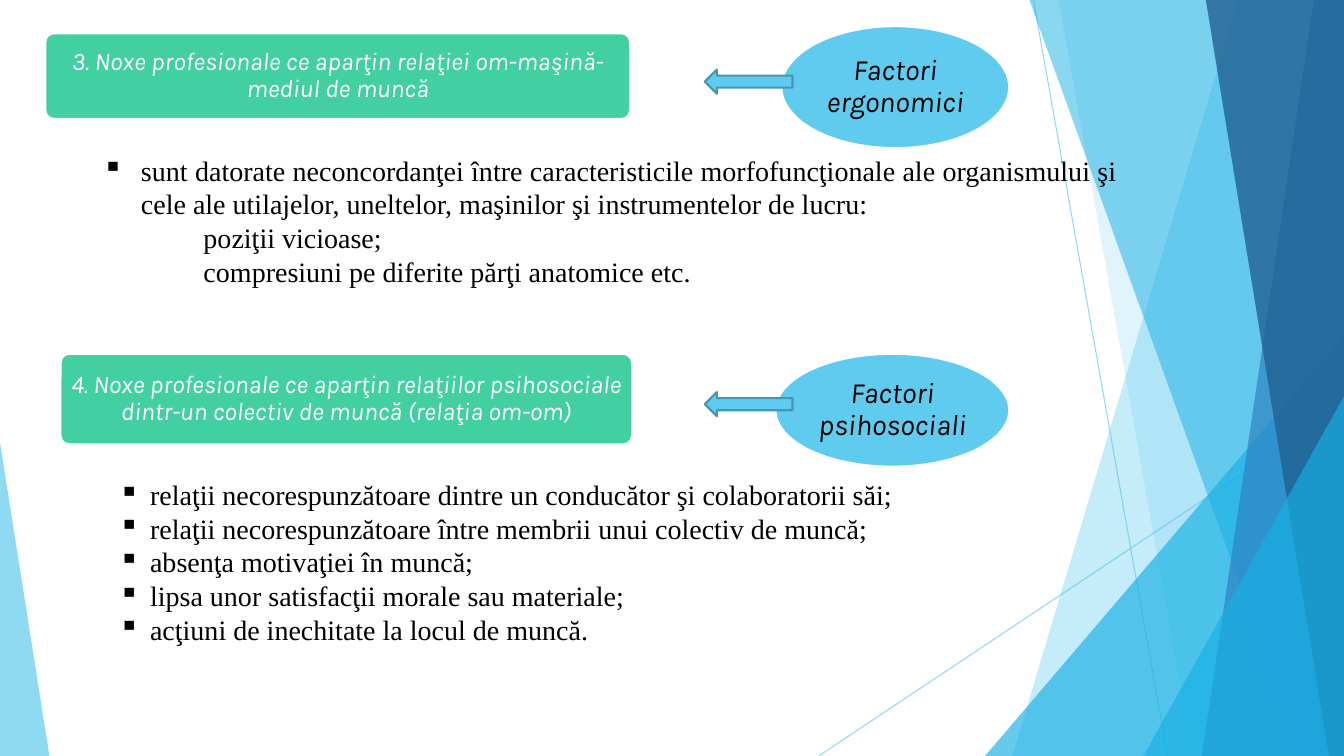
import pptx
import pptx.util
import pptx.dml.color
import pptx.enum.shapes
import pptx.enum.text
import pptx.oxml.ns
import lxml.etree

Inches, Pt = pptx.util.Inches, pptx.util.Pt
RGBColor = pptx.dml.color.RGBColor
MSO_SHAPE = pptx.enum.shapes.MSO_SHAPE
PP_ALIGN = pptx.enum.text.PP_ALIGN

WIDTH, HEIGHT = 13.33, 7.5
SKY = RGBColor(0x5F, 0xCB, 0xEF)
AZURE = RGBColor(0x17, 0xB0, 0xE4)
BLUE = RGBColor(0x2E, 0x83, 0xC3)
NAVY = RGBColor(0x22, 0x62, 0x92)
ARROW_EDGE = RGBColor(0x46, 0x96, 0xB1)
GREEN = RGBColor(0x42, 0xD0, 0xA2)
WHITE = RGBColor(0xFF, 0xFF, 0xFF)
BLACK = RGBColor(0, 0, 0)


def add_child(parent, tag, **attributes):
    return lxml.etree.SubElement(parent, pptx.oxml.ns.qn(tag), **attributes)


def set_opacity(part, percent):
    for color in part.iter(pptx.oxml.ns.qn("a:srgbClr")):
        add_child(color, "a:alpha", val=str(percent * 1000))


def paint(shape, color, edge=None, opacity=100):
    shape.shadow.inherit = False
    shape.fill.solid()
    shape.fill.fore_color.rgb = color
    if opacity < 100:
        set_opacity(shape.fill._xPr, opacity)
    if edge is None:
        shape.line.fill.background()
    else:
        shape.line.color.rgb = edge
        shape.line.width = Pt(1.5)


def add_preset(slide, kind, box):
    return slide.shapes.add_shape(kind, *map(Inches, box))


def write(paragraph, text, font, size, color, italic=False):
    run = paragraph.add_run()
    run.text = text
    run.font.name = font
    run.font.size = Pt(size)
    run.font.color.rgb = color
    run.font.italic = italic


def draw_backdrop(slide, width, height):
    """Thin rays and translucent facets along the slide's edges."""
    def ray(x1, y1, x2, y2):
        line = slide.shapes.add_connector(
            pptx.enum.shapes.MSO_CONNECTOR.STRAIGHT, *map(Inches, (x1, y1, x2, y2)))
        line.line.color.rgb = SKY
        line.line.width = Pt(0.75)
        properties = line._element.spPr
        set_opacity(properties, 70)
        add_child(properties, "a:effectLst")

    def facet(top_x, bottom_x, color, opacity):
        # Quadrilateral from a slanted left side to the right edge
        outline = slide.shapes.build_freeform(Inches(top_x), Inches(0))
        corners = [(width, 0), (width, height), (bottom_x, height)]
        outline.add_line_segments([(Inches(x), Inches(y)) for x, y in corners])
        paint(outline.convert_to_shape(), color, opacity=opacity)

    def corner(left, top, span, apex, color, opacity):
        triangle = add_preset(slide, MSO_SHAPE.ISOSCELES_TRIANGLE,
                              (left, top, span, height - top))
        triangle.adjustments[0] = apex
        paint(triangle, color, opacity=opacity)

    ray(10.25, 0, 11.58, height)
    ray(width, 4.03, 8.12, height)
    facet(12.28, 10.04, SKY, 36)
    facet(10.5, 11.83, SKY, 20)
    corner(9.77, 3.33, width - 9.77, 1, AZURE, 66)
    facet(10.21, 12.91, AZURE, 50)
    facet(13.03, 11.92, BLUE, 70)
    facet(11.96, 13.18, NAVY, 80)
    corner(11.34, 3.93, width - 11.34, 1, AZURE, 66)
    corner(0, 4.39, 0.49, 0, SKY, 70)


def add_label(slide, kind, box, text, fill, color, size, inset):
    label = add_preset(slide, kind, box)
    paint(label, fill, WHITE)
    if kind == MSO_SHAPE.ROUNDED_RECTANGLE:
        label.adjustments[0] = 0.1
    frame = label.text_frame
    frame.word_wrap = True
    frame.vertical_anchor = pptx.enum.text.MSO_ANCHOR.MIDDLE
    frame.margin_left = frame.margin_right = Inches(inset)
    frame.margin_top = frame.margin_bottom = Inches(inset)
    paragraph = frame.paragraphs[0]
    paragraph.alignment = PP_ALIGN.CENTER
    paragraph.line_spacing = 0.9
    write(paragraph, text, "Karla", size, color, italic=True)


def add_details(slide, box, hanging, bullets, examples):
    frame = slide.shapes.add_textbox(*map(Inches, box)).text_frame
    frame.word_wrap = True
    for index, text in enumerate(bullets + examples):
        paragraph = frame.paragraphs[0] if index == 0 else frame.add_paragraph()
        paragraph.alignment = PP_ALIGN.JUSTIFY
        properties = paragraph._p.get_or_add_pPr()
        if index < len(bullets):
            properties.set("marL", str(Inches(hanging)))
            properties.set("indent", str(-Inches(hanging)))
            add_child(properties, "a:buChar", char="▪")
        else:
            properties.set("marL", str(Inches(1)))
            properties.set("indent", "0")
        write(paragraph, text, "Times New Roman", 20, BLACK)


def add_hazard(slide, top, heading_box, factor_box, details_box,
               heading, factor, hanging, bullets, examples=()):
    """One hazard class: heading, arrow, factor and details below top."""
    def below(box):
        left, offset, width, height = box
        return left, top + offset, width, height

    add_details(slide, below(details_box), hanging, list(bullets), list(examples))
    add_label(slide, MSO_SHAPE.ROUNDED_RECTANGLE, below(heading_box),
              heading, GREEN, WHITE, 18, 0.01)
    add_label(slide, MSO_SHAPE.OVAL, below(factor_box), factor, SKY, BLACK, 21, 0.03)
    arrow = add_preset(slide, MSO_SHAPE.LEFT_ARROW, below((6.99, 0.69, 0.87, 0.24)))
    paint(arrow, SKY, ARROW_EDGE)


def main():
    deck = pptx.Presentation()
    deck.slide_width, deck.slide_height = Inches(WIDTH), Inches(HEIGHT)
    slide = deck.slides.add_slide(deck.slide_layouts[6])
    draw_backdrop(slide, WIDTH, HEIGHT)

    # Ergonomic factors
    add_hazard(
        slide, 0, (0.45, 0.33, 5.8, 0.85), (7.75, 0.26, 2.26, 1.21),
        (0.92, 1.47, 10.26, 1.45),
        "3. Noxe profesionale ce aparţin relaţiei om-maşină-mediul de muncă",
        "Factori ergonomici", 0.38,
        ["sunt datorate neconcordanţei între caracteristicile morfofuncţionale ale "
         "organismului şi cele ale utilajelor, uneltelor, maşinilor şi "
         "instrumentelor de lucru:"],
        ["poziţii vicioase;", "compresiuni pe diferite părţi anatomice etc."])

    # Psychosocial factors
    add_hazard(
        slide, 3.2, (0.6, 0.31, 5.67, 0.9), (7.69, 0.31, 2.32, 1.12),
        (1.08, 1.49, 9.79, 1.78),
        "4. Noxe profesionale ce aparţin relaţiilor psihosociale dintr-un colectiv "
        "de muncă (relaţia om-om)",
        "Factori psihosociali", 0.31,
        ["relaţii necorespunzătoare dintre un conducător şi colaboratorii săi;",
         "relaţii necorespunzătoare între membrii unui colectiv de muncă;",
         "absenţa motivaţiei în muncă;",
         "lipsa unor satisfacţii morale sau materiale;",
         "acţiuni de inechitate la locul de muncă."])

    deck.save("out.pptx")


if __name__ == "__main__":
    main()
